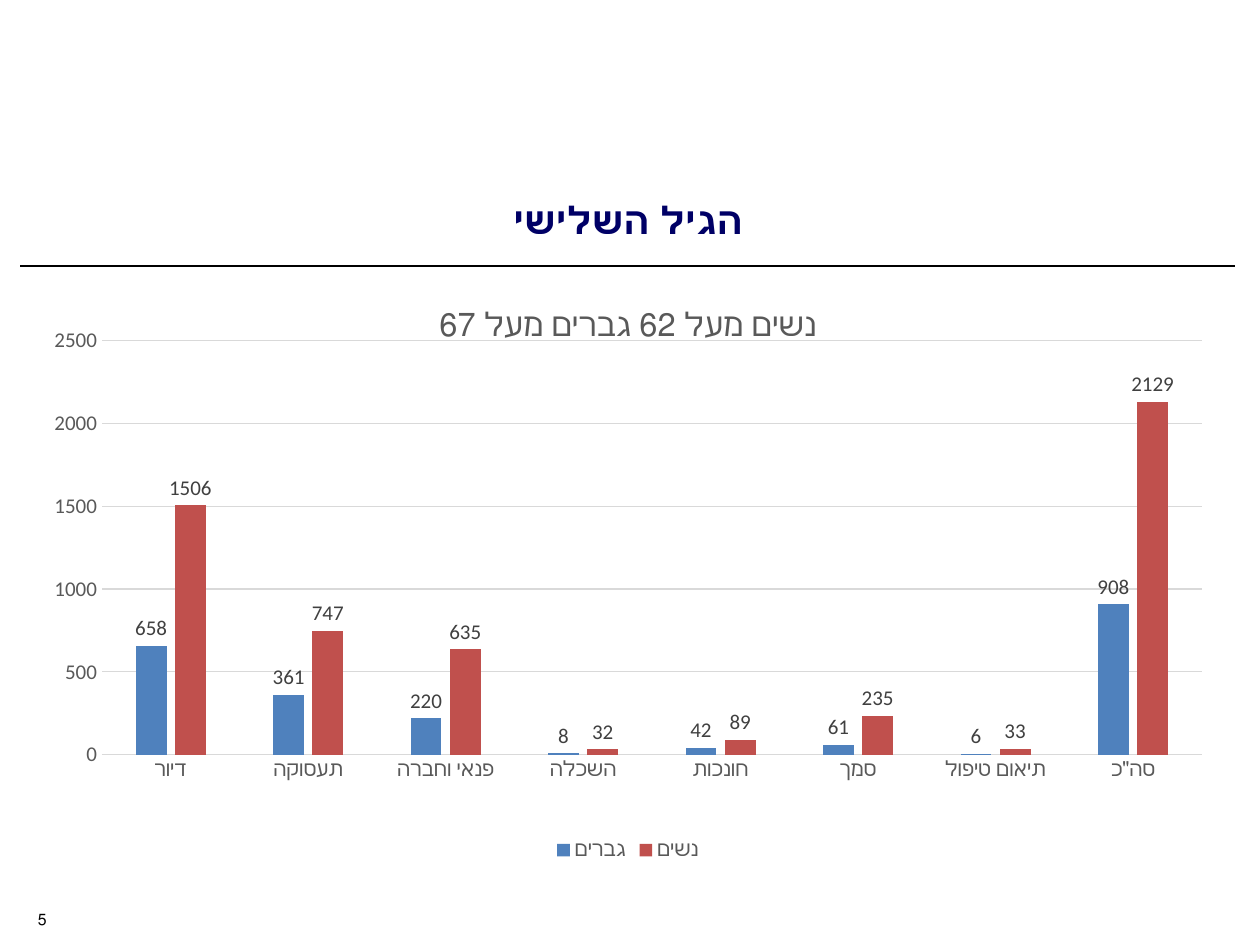
from dataclasses import dataclass

from lxml.etree import SubElement
from pptx import Presentation
from pptx.chart.data import CategoryChartData as Data
from pptx.dml.color import RGBColor
from pptx.enum.chart import XL_CHART_TYPE as Kind
from pptx.enum.chart import XL_LABEL_POSITION as Spot
from pptx.enum.chart import XL_LEGEND_POSITION as Side
from pptx.enum.chart import XL_TICK_MARK as Tick
from pptx.enum.shapes import MSO_CONNECTOR as Wire
from pptx.enum.text import MSO_ANCHOR as Anchor
from pptx.enum.text import PP_ALIGN as Align
from pptx.oxml.ns import qn
from pptx.util import Cm, Pt

FACE = "Calibri"
GRAY = "595959"
PALE = "D9D9D9"


@dataclass
class Group:
    name: str
    color: str
    vals: tuple[int, ...]


CATS = ("דיור", "תעסוקה", "פנאי וחברה", "השכלה",
        "חונכות", "סמך", "תיאום טיפול", 'סה"כ')
GROUPS = (
    Group("גברים", "4F81BD", (658, 361, 220, 8, 42, 61, 6, 908)),
    Group("נשים", "C0504D", (1506, 747, 635, 32, 89, 235, 33, 2129)),
)


def paint(target, color: str) -> None:
    target.rgb = RGBColor.from_string(color)


def style(font, size: float, color: str, bold: bool = False) -> None:
    font.name = FACE
    font.size = Pt(size)
    font.bold = bold
    paint(font.color, color)


def stroke(line, color: str) -> None:
    line.width = Pt(0.75)
    paint(line.fill_color if hasattr(line, "fill_color") else line.color, color)


def write(frame, text: str, *, size: float, color: str,
          bold: bool = False, align=Align.CENTER) -> None:
    para = frame.paragraphs[0]
    para.alignment = align
    para._p.get_or_add_pPr().set("rtl", "1")
    run = para.add_run()
    run.text = text
    style(run.font, size, color, bold)


def place(shape, left: float, top: float, width: float, height: float) -> None:
    shape.left, shape.top = Cm(left), Cm(top)
    shape.width, shape.height = Cm(width), Cm(height)


def fit(chart, **box: float) -> None:
    area = chart._chartSpace.chart.plotArea
    old = area.find(qn("c:layout"))
    if old is not None:
        area.remove(old)
    lay = SubElement(area, qn("c:layout"))
    area.insert(0, lay)
    man = SubElement(lay, qn("c:manualLayout"))
    parts = {"layoutTarget": "inner", "xMode": "edge", "yMode": "edge", **box}
    for tag, val in parts.items():
        SubElement(man, qn(f"c:{tag}")).set("val", str(val))


def draw_bars(slide) -> None:
    data = Data()
    data.categories = CATS
    for group in GROUPS:
        data.add_series(group.name, group.vals)
    chart = slide.shapes.add_chart(
        Kind.COLUMN_CLUSTERED, Cm(0.61), Cm(5.69), Cm(24.1), Cm(11.76), data
    ).chart
    style(chart.font, 10, "000000")
    chart.has_title = True
    write(chart.chart_title.text_frame, "נשים מעל 62 גברים מעל 67",
          size=18.6, color=GRAY)
    chart.chart_title.include_in_layout = False
    chart.has_legend = True
    chart.legend.position = Side.BOTTOM
    chart.legend.include_in_layout = False
    style(chart.legend.font, 12, GRAY)

    for axis in (chart.category_axis, chart.value_axis):
        axis.major_tick_mark = axis.minor_tick_mark = Tick.NONE
        style(axis.tick_labels.font, 12, GRAY)
    stroke(chart.category_axis.format.line, PALE)
    scale = chart.value_axis
    scale.minimum_scale, scale.maximum_scale = 0, 2500
    scale.major_unit = 500
    scale.format.line.fill.background()
    stroke(scale.major_gridlines.format.line, PALE)

    plot = chart.plots[0]
    plot.gap_width, plot.overlap = 219, -27
    plot.vary_by_categories = False
    for series, group in zip(plot.series, GROUPS):
        series.format.fill.solid()
        paint(series.format.fill.fore_color, group.color)
        labels = series.data_labels
        labels.show_value = True
        labels.position = Spot.OUTSIDE_END
        style(labels.font, 12, "404040")
    fit(chart, x=0.06, y=0.1, w=0.92, h=0.71)


def main() -> None:
    deck = Presentation()
    deck.slide_width, deck.slide_height = Cm(25.4), Cm(19.05)
    slide = deck.slides.add_slide(deck.slide_layouts[5])

    rule = slide.shapes.add_connector(
        Wire.STRAIGHT, Cm(24.89), Cm(5.36), Cm(0.41), Cm(5.36))
    stroke(rule.line, "000000")
    SubElement(rule._element.spPr, qn("a:effectLst"))

    page = slide.shapes.add_textbox(Cm(0.2), Cm(18.21), Cm(0.99), Cm(0.64))
    page.text_frame.word_wrap = True
    write(page.text_frame, "5", size=9, color="000000", align=Align.RIGHT)

    title = slide.shapes.title
    place(title, 0.61, 3.81, 24.1, 1.22)
    title.text_frame.vertical_anchor = Anchor.MIDDLE
    write(title.text_frame, "הגיל השלישי", size=21.6, color="000066", bold=True)

    draw_bars(slide)
    deck.save("out.pptx")


if __name__ == "__main__":
    main()
